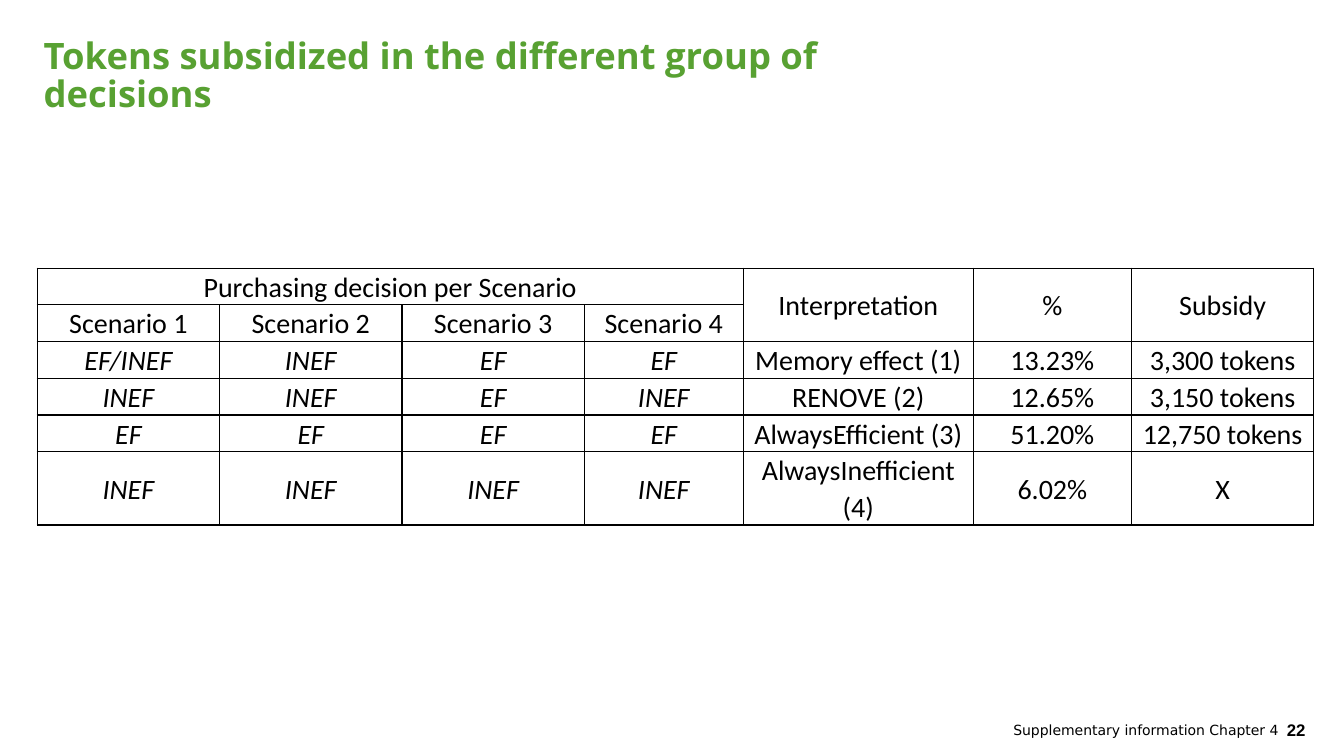
import pptx
import pptx.dml.color
import pptx.enum.text
import pptx.oxml
import pptx.oxml.ns
import pptx.util
from dataclasses import dataclass

Pt = pptx.util.Pt
ALIGN = pptx.enum.text.PP_ALIGN
MIDDLE = pptx.enum.text.MSO_ANCHOR.MIDDLE


@dataclass
class Theme:
    green: str = "58A132"
    black: str = "000000"
    title_size: int = 26
    table_size: int = 20
    number_size: int = 12
    footer_size: int = 10
    title_font: str = "Open Sans"
    table_font: str = "Calibri"
    number_font: str = "Arial"
    footer_font: str = "DejaVu Sans"


class Deck:
    def __init__(self, theme):
        self.theme = theme
        self.prs = pptx.Presentation()
        self.prs.slide_width, self.prs.slide_height = Pt(960), Pt(540)
        self.slide = self.prs.slides.add_slide(self.prs.slide_layouts[5])

    def style(self, target, values):
        for name, value in values.items():
            setattr(target, name, value)

    def add_text(self, tf, text, font, size, color, paragraph, bold=False, italic=False):
        p = tf.paragraphs[0]
        self.style(p, paragraph)
        r = p.add_run()
        r.text = text
        self.style(r.font, {"name": font, "size": Pt(size), "bold": bold, "italic": italic})
        r.font.color.rgb = pptx.dml.color.RGBColor.from_string(color)

    def title(self, text, left, top, width, height):
        t = self.theme
        sp = self.slide.shapes.title
        self.style(sp, {"left": Pt(left), "top": Pt(top), "width": Pt(width), "height": Pt(height)})
        self.style(sp.text_frame, {
            "word_wrap": True,
            "vertical_anchor": MIDDLE,
            "auto_size": pptx.enum.text.MSO_AUTO_SIZE.NONE,
        })
        self.add_text(sp.text_frame, text, t.title_font, t.title_size, t.green,
                      {"alignment": ALIGN.LEFT, "line_spacing": 0.87}, bold=True)

    def footer(self, text, left, width, font, size, bold=False):
        sp = self.slide.shapes.add_textbox(Pt(left), Pt(502.5), Pt(width), Pt(37.5))
        self.style(sp.text_frame, {"word_wrap": True, "vertical_anchor": MIDDLE})
        self.add_text(sp.text_frame, text, font, size, self.theme.black,
                      {"alignment": ALIGN.RIGHT}, bold=bold)

    def border(self, cell):
        tcPr = cell._tc.get_or_add_tcPr()
        for side in "LRTB":
            tcPr.append(pptx.oxml.parse_xml(
                f'<a:ln{side} {pptx.oxml.ns.nsdecls("a")} w="{Pt(1)}"><a:solidFill>'
                f'<a:srgbClr val="{self.theme.black}"/></a:solidFill></a:ln{side}>'))

    def table(self, rows, left, top, widths, heights, spans, italic_area):
        t = self.theme
        table = self.slide.shapes.add_table(
            len(rows), len(widths), Pt(left), Pt(top), Pt(sum(widths)), Pt(sum(heights))).table
        self.style(table, {"first_row": False, "horz_banding": False})
        for column, width in zip(table.columns, widths):
            column.width = Pt(width)
        for row, height in zip(table.rows, heights):
            row.height = Pt(height)
        for first, last in spans:
            table.cell(*first).merge(table.cell(*last))
        first_row, last_column = italic_area
        for i, row in enumerate(rows):
            for j, text in enumerate(row):
                cell = table.cell(i, j)
                self.border(cell)
                cell.fill.background()
                self.style(cell, {
                    "margin_left": Pt(5), "margin_right": Pt(5),
                    "margin_top": 0, "margin_bottom": 0, "vertical_anchor": MIDDLE,
                })
                if text:
                    self.add_text(cell.text_frame, text, t.table_font, t.table_size, t.black,
                                  {"alignment": ALIGN.CENTER, "line_spacing": 1.07},
                                  italic=i >= first_row and j <= last_column)


def main():
    theme = Theme()
    deck = Deck(theme)
    deck.title("Tokens subsidized in the different group of decisions", 24, 24, 575, 62.5)
    rows = [
        ["Purchasing decision per Scenario", "", "", "", "Interpretation", "%", "Subsidy"],
        [f"Scenario {n}" for n in range(1, 5)] + [""] * 3,
        ["EF/INEF", "INEF", "EF", "EF", "Memory effect (1)", "13.23%", "3,300 tokens"],
        ["INEF", "INEF", "EF", "INEF", "RENOVE (2)", "12.65%", "3,150 tokens"],
        ["EF", "EF", "EF", "EF", "AlwaysEfficient (3)", "51.20%", "12,750 tokens"],
        ["INEF", "INEF", "INEF", "INEF", "AlwaysInefficient (4)", "6.02%", "X"],
    ]
    spans = [((0, 0), (0, 3))] + [((0, j), (1, j)) for j in range(4, 7)]
    deck.table(rows, 26.6, 191.5, [130.3, 130.3, 130.3, 113.5, 164.3, 113, 130.3],
               [26] * 5 + [52], spans, (2, 3))
    deck.footer("Supplementary information Chapter 4", 9.5, 910.8,
                theme.footer_font, theme.footer_size)
    deck.footer("22", 871.2, 68.4, theme.number_font, theme.number_size, bold=True)
    deck.prs.save("out.pptx")


if __name__ == "__main__":
    main()
